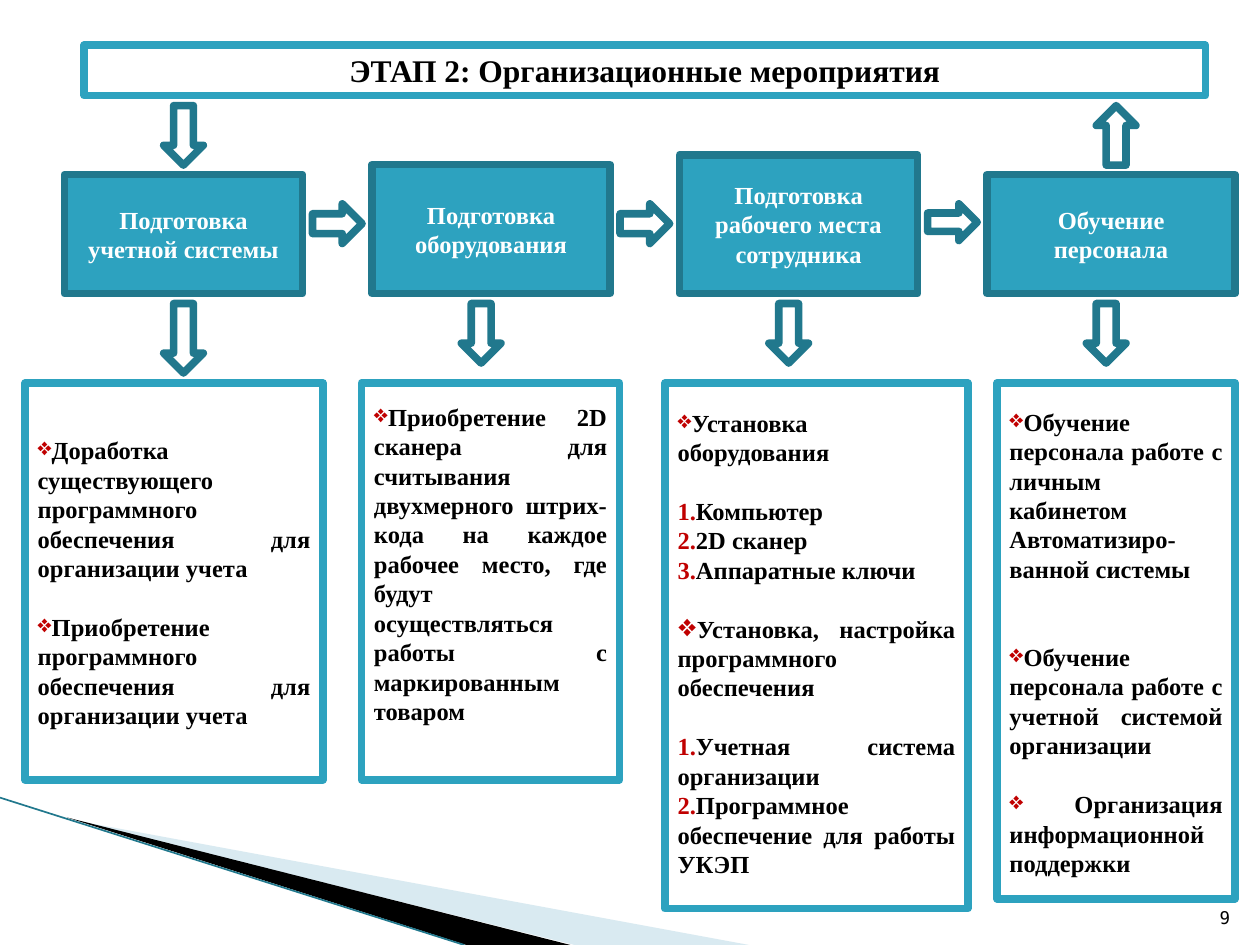
"""Build the slide with the stage 2 flow of organisational measures."""
from lxml import etree
from pptx import Presentation
from pptx import util as u
from pptx.dml.color import RGBColor
from pptx.enum import shapes, text
from pptx.oxml.ns import qn

THEME = {
    "teal": RGBColor.from_string("2DA2BF"),
    "dark": RGBColor.from_string("21788D"),
    "pale": RGBColor.from_string("A0CBDC"),
    "white": RGBColor.from_string("FFFFFF"),
    "black": RGBColor.from_string("000000"),
    "bullet": "C00000",
    "line": u.Pt(4.33),
    "title": u.Pt(18),
    "body": u.Pt(14),
    "number": u.Pt(10),
    "gap": u.Pt(16.8),
    "font": "Times New Roman",
    "mono": "DejaVu Sans Mono",
}
MSO, ALIGN, ANCHOR = shapes.MSO_SHAPE, text.PP_ALIGN, text.MSO_ANCHOR

prs = Presentation()
prs.slide_width, prs.slide_height = u.Cm(25.4), u.Cm(19.05)
s = prs.slides.add_slide(prs.slide_layouts[6])


def add_box(kind, left, top, width, height, line, fill=None):
    sp = s.shapes.add_shape(kind, u.Cm(left), u.Cm(top), u.Cm(width), u.Cm(height))
    sp.shadow.inherit = False
    sp.line.color.rgb, sp.line.width = THEME[line], THEME["line"]
    if fill:
        sp.fill.solid()
        sp.fill.fore_color.rgb = THEME[fill]
    else:
        sp.fill.background()
    return sp


def add_text(p, words, align, size="body", color="black", font="font", bold=True):
    p.alignment = align
    r = p.add_run()
    r.text = words
    fmt = {"size": THEME[size], "name": THEME[font], "bold": bold}
    for name, value in fmt.items():
        setattr(r.font, name, value)
    r.font.color.rgb = THEME[color]


wedges = [
    ("pale", [(1.4, 16.52), (15.1, 19.05), (11.58, 19.05)]),
    ("black", [(1.35, 16.48), (11.5, 19.05), (9.4, 19.05)]),
]
for color, points in wedges:
    first, *rest = [(u.Cm(x), u.Cm(y)) for x, y in points]
    fb = s.shapes.build_freeform(*first)
    fb.add_line_segments(rest)
    sp = fb.convert_to_shape()
    sp.shadow.inherit = False
    sp.line.fill.background()
    sp.fill.solid()
    sp.fill.fore_color.rgb = THEME[color]
    if color == "pale":
        clr = sp.fill._xPr.find(qn("a:solidFill"))[0]
        etree.SubElement(clr, qn("a:alpha"), val="40000")

edge = s.shapes.add_connector(
    shapes.MSO_CONNECTOR.STRAIGHT, u.Cm(0), u.Cm(16.08), u.Cm(9.36), u.Cm(19.05)
)
edge.line.color.rgb, edge.line.width = THEME["dark"], u.Pt(0.95)
etree.SubElement(edge._element.spPr, qn("a:effectLst"))

number = s.shapes.add_textbox(u.Cm(24.03), u.Cm(17.81), u.Cm(1.02), u.Cm(1.02))
number.text_frame.word_wrap = True
number.text_frame.vertical_anchor = ANCHOR.BOTTOM
add_text(number.text_frame.paragraphs[0], "9", ALIGN.RIGHT, "number", font="mono", bold=False)

title = add_box(MSO.RECTANGLE, 1.7, 0.91, 22.6, 1.02, "teal", "white")
title.text_frame.vertical_anchor = ANCHOR.MIDDLE
add_text(title.text_frame.paragraphs[0], "ЭТАП 2: Организационные мероприятия", ALIGN.CENTER, "title")

step, bottom = 6.2, 5.92
steps = [
    ("Подготовка учетной системы", 4.8, 2.4),
    ("Подготовка оборудования", 4.8, 2.6),
    ("Подготовка рабочего места сотрудника", 4.8, 2.8),
    ("Обучение персонала", 5.0, 2.4),
]
for i, (words, width, height) in enumerate(steps):
    sp = add_box(MSO.RECTANGLE, 1.3 + i * step, bottom - height, width, height, "dark", "teal")
    sp.text_frame.word_wrap = True
    sp.text_frame.vertical_anchor = ANCHOR.MIDDLE
    add_text(sp.text_frame.paragraphs[0], words, ALIGN.CENTER, color="white")

for i, height in enumerate((0.8, 0.8, 0.74)):
    add_box(MSO.RIGHT_ARROW, 6.3 + i * step, 4.11, 1.0, height, "dark")

arrows = [
    (MSO.DOWN_ARROW, 3.3, 2.13, 1.2),
    (MSO.UP_ARROW, 22.1, 2.13, 1.2),
    (MSO.DOWN_ARROW, 3.3, 6.12, 1.4),
    (MSO.DOWN_ARROW, 9.3, 6.12, 1.2),
    (MSO.DOWN_ARROW, 15.5, 6.12, 1.2),
    (MSO.DOWN_ARROW, 21.9, 6.12, 1.2),
]
for kind, left, top, height in arrows:
    add_box(kind, left, top, 0.8, height, "dark")

cards = [
    (0.51, 6.0, 8.0, 1.06, [
        ("❖", 0, "Доработка существующего программного обеспечения для организации учета"),
        ("❖", 1, "Приобретение программного обеспечения для организации учета"),
    ]),
    (7.29, 5.2, 8.0, 0.38, [
        ("❖", 0, "Приобретение 2D сканера для считывания двухмерного штрих-кода на каждое "
                 "рабочее место, где будут осуществляться работы с маркированным товаром"),
    ]),
    (13.41, 6.1, 10.6, 0.5, [
        ("❖", 0, "Установка оборудования"),
        ("1.", 1, "Компьютер"),
        ("1.", 0, "2D сканер"),
        ("1.", 0, "Аппаратные ключи"),
        ("❖", 1, "Установка, настройка программного обеспечения"),
        ("1.", 1, "Учетная система организации"),
        ("1.", 0, "Программное обеспечение для работы УКЭП"),
    ]),
    (20.1, 4.8, 10.4, 0.48, [
        ("❖", 0, "Обучение персонала работе с личным кабинетом Автоматизиро-ванной системы"),
        ("❖", 2, "Обучение персонала работе с учетной системой организации"),
        ("❖", 1, " Организация информационной поддержки"),
    ]),
]
for left, width, height, inset, items in cards:
    sp = add_box(MSO.RECTANGLE, left, 7.72, width, height, "teal", "white")
    tf = sp.text_frame
    fmt = {"word_wrap": True, "vertical_anchor": ANCHOR.TOP, "margin_top": u.Cm(inset)}
    for name, value in fmt.items():
        setattr(tf, name, value)
    for i, (mark, gaps, words) in enumerate(items):
        p = tf.paragraphs[0] if i == 0 else tf.add_paragraph()
        pPr = p._p.get_or_add_pPr()
        pPr.set("marL", "0")
        pPr.set("indent", "0")
        clr = etree.SubElement(pPr, qn("a:buClr"))
        etree.SubElement(clr, qn("a:srgbClr"), val=THEME["bullet"])
        if mark == "❖":
            etree.SubElement(pPr, qn("a:buChar"), char=mark)
        else:
            etree.SubElement(pPr, qn("a:buFont"), typeface=THEME["font"])
            etree.SubElement(pPr, qn("a:buAutoNum"), type="arabicPeriod")
        if gaps:
            p.space_before = gaps * THEME["gap"]
        add_text(p, words, ALIGN.JUSTIFY)

prs.save("out.pptx")
